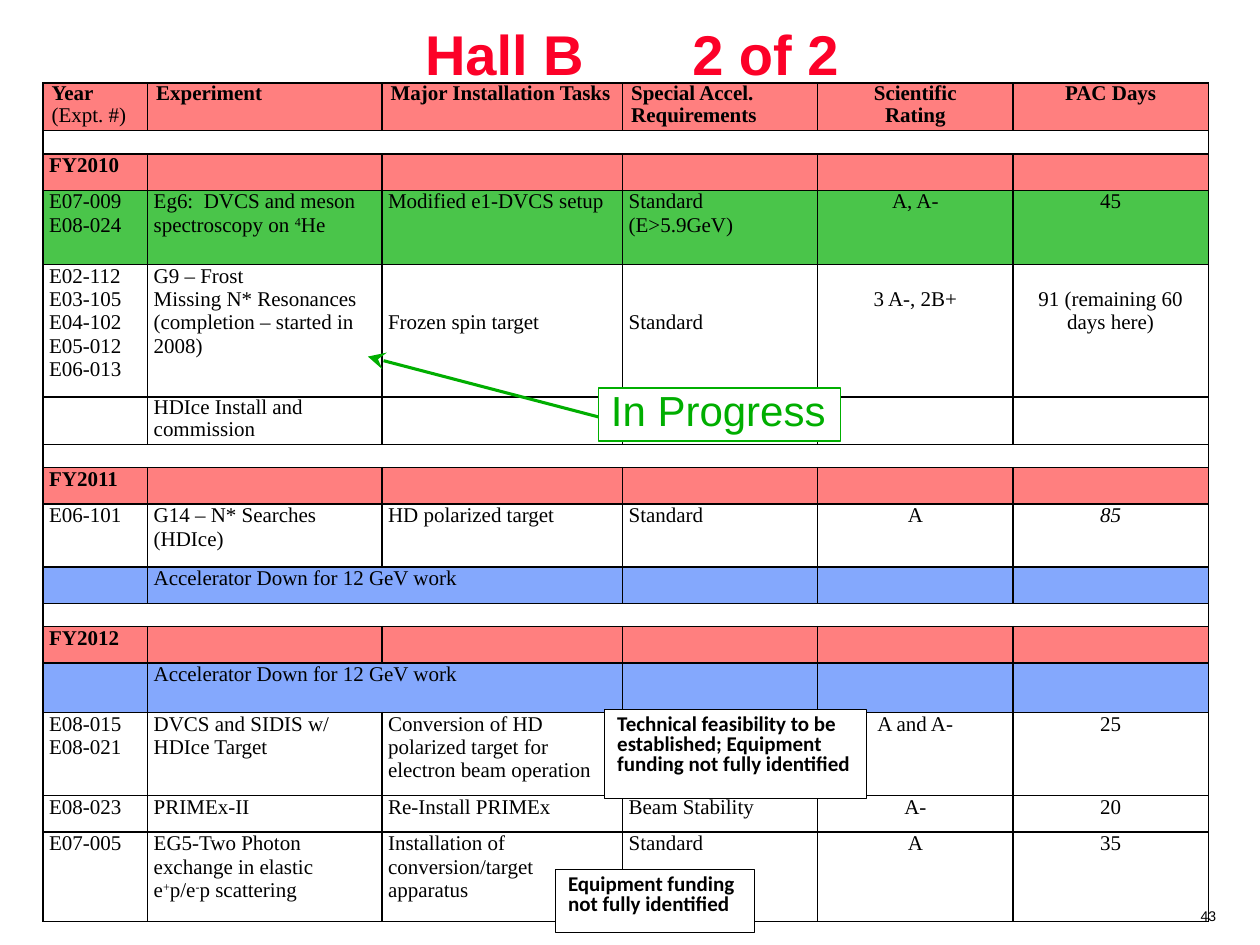
import pptx
import pptx.dml.color
import pptx.enum.shapes
import pptx.enum.text
import pptx.oxml
import pptx.oxml.ns
import pptx.util
from pptx.util import Inches

COLORS = {"black": "000000", "white": "FFFFFF", "title": "FC0128",
          "red": "FF0000", "green": "00AE00", "blue": "0B52FC"}
ALPHA = {"red": 50, "green": 71, "blue": 50}
ALIGN = pptx.enum.text.PP_ALIGN
COLUMNS = [0.83, 1.86, 1.91, 1.55, 1.55, 1.55]
LINE = 0.185  # height of one table line in inches
DOWN = "Accelerator Down for 12 GeV work"

# Each row: height, fill, cell texts; ^ encloses superscripts
ROWS = [
    (0.29, "red", ["Year\n(Expt. #)", "Experiment", "Major Installation Tasks",
                   "Special Accel. Requirements", "Scientific\nRating", "PAC Days"]),
    (0.18, None, []),
    (0.29, "red", ["FY2010"]),
    (0.59, "green", ["E07-009\nE08-024", "Eg6:  DVCS and meson spectroscopy on ^4^He",
                     "Modified e1-DVCS setup", "Standard (E>5.9GeV)", "A, A-", "45"]),
    (1.05, None, ["E02-112\nE03-105\nE04-102\nE05-012\nE06-013",
                  "G9 – Frost\nMissing N* Resonances\n(completion – started in 2008)",
                  "Frozen spin target", "Standard", "3 A-, 2B+",
                  "91 (remaining 60 days here)"]),
    (0.29, None, ["", "HDIce Install and commission"]),
    (0.17, None, []),
    (0.29, "red", ["FY2011"]),
    (0.5, None, ["E06-101", "G14 – N* Searches (HDIce)", "HD polarized target",
                 "Standard", "A", "85"]),
    (0.29, "blue", ["", DOWN]),
    (0.14, None, []),
    (0.29, "red", ["FY2012"]),
    (0.39, "blue", ["", DOWN]),
    (0.66, None, ["E08-015\nE08-021", "DVCS and SIDIS w/ HDIce Target",
                  "Conversion of HD polarized target for electron beam operation",
                  "", "A and A-", "25"]),
    (0.29, None, ["E08-023", "PRIMEx-II", "Re-Install PRIMEx", "Beam Stability",
                  "A-", "20"]),
    (0.71, None, ["E07-005", "EG5-Two Photon exchange in elastic \ne^+^p/e^-^p scattering",
                  "Installation of conversion/target apparatus ", "Standard", "A", "35"]),
]
FROST_ROW = 4
LINES_DOWN = [0, 0, 2, 2, 1, 1]  # lines by which the Frost row's texts sit lower
TIGHT_ROWS = (0, 5)  # two lines of text fill the whole row


def rgb(name):
    return pptx.dml.color.RGBColor.from_string(COLORS[name])


def style(font, name, size, color="black", bold=False):
    font.name = name
    font.size = pptx.util.Pt(size)
    font.color.rgb = rgb(color)
    font.bold = bold


def add_title(page):
    title = page.shapes.title
    title.left, title.top = Inches(0.95), Inches(0.02)
    title.width, title.height = Inches(8.13), Inches(0.81)
    title.text_frame.vertical_anchor = pptx.enum.text.MSO_ANCHOR.MIDDLE
    para = title.text_frame.paragraphs[0]
    para.alignment = ALIGN.CENTER
    for text in ("Hall B", " ", "2 of 2"):
        span = para.add_run()
        span.text = text
        style(span.font, "Arial", 32, "title", True)
    # One wide space separates the two halves
    para.runs[1].font._element.set("spc", "5300")


def set_borders(cell):
    properties = cell._tc.get_or_add_tcPr()
    for side in ("lnL", "lnR", "lnT", "lnB"):
        properties.append(pptx.oxml.parse_xml(
            f'<a:{side} {pptx.oxml.ns.nsdecls("a")} w="12700"><a:solidFill>'
            f'<a:srgbClr val="{COLORS["black"]}"/></a:solidFill></a:{side}>'))


def set_fill(cell, color):
    if color is None:
        cell.fill.background()
        return
    cell.fill.solid()
    cell.fill.fore_color.rgb = rgb(color)
    fill = cell._tc.tcPr.find(pptx.oxml.ns.qn("a:solidFill"))
    fill[0].append(pptx.oxml.parse_xml(
        f'<a:alpha {pptx.oxml.ns.nsdecls("a")} val="{ALPHA[color] * 1000}"/>'))


def write_cell(cell, text, centered, bold, size, spacing):
    cell.text_frame.text = text.replace("^", "")
    for para, line in zip(cell.text_frame.paragraphs, text.split("\n")):
        para.alignment = ALIGN.CENTER if centered else ALIGN.LEFT
        para.line_spacing = spacing
        style(para.font, "Times New Roman", size)
        if not line:
            continue
        para.clear()
        for index, part in enumerate(line.split("^")):
            span = para.add_run()
            span.text = part
            style(span.font, "Times New Roman", size, bold=bold)
            if index % 2:
                span.font._element.set("baseline", "30000")


def add_schedule(page):
    frame = page.shapes.add_table(len(ROWS), len(COLUMNS), Inches(0.34), Inches(0.66),
                                  Inches(sum(COLUMNS)), Inches(sum(row[0] for row in ROWS)))
    table = frame.table
    table.first_row = table.horz_banding = False
    for column, width in zip(table.columns, COLUMNS):
        column.width = Inches(width)
    for r, (height, color, texts) in enumerate(ROWS):
        table.rows[r].height = Inches(height)
        size = 12 if texts else 11
        spacing = 0.94 if r in TIGHT_ROWS else 1.0
        for c in range(len(COLUMNS)):
            cell = table.cell(r, c)
            cell.margin_left = cell.margin_right = Inches(0.05 if r else 0.07)
            cell.margin_bottom = 0
            cell.margin_top = Inches(LINES_DOWN[c] * LINE) if r == FROST_ROW else 0
            set_borders(cell)
            set_fill(cell, color)
            text = texts[c] if c < len(texts) else ""
            write_cell(cell, text, c > 3, color == "red", size, spacing)
        if not texts:  # separator row
            table.cell(r, 0).merge(table.cell(r, len(COLUMNS) - 1))
        elif DOWN in texts:
            table.cell(r, 1).merge(table.cell(r, 2))
    # Exceptions to the row styles
    table.cell(0, 0).text_frame.paragraphs[1].runs[0].font.bold = False
    table.cell(8, 5).text_frame.paragraphs[0].runs[0].font.italic = True


def add_callout(page, place, text, font, size, color="black", bold=False, wrap=True):
    box = page.shapes.add_shape(pptx.enum.shapes.MSO_SHAPE.RECTANGLE,
                                *[Inches(value) for value in place])
    box.shadow.inherit = False
    box.fill.solid()
    box.fill.fore_color.rgb = rgb("white")
    box.line.color.rgb = rgb(color)
    box.line.width = pptx.util.Pt(0.75)
    box.text_frame.text = text
    box.text_frame.word_wrap = wrap
    box.text_frame.vertical_anchor = pptx.enum.text.MSO_ANCHOR.TOP
    para = box.text_frame.paragraphs[0]
    para.alignment = ALIGN.LEFT
    para.line_spacing = 0.8
    para.space_before = pptx.util.Pt(size * 0.2)
    style(para.runs[0].font, font, size, color, bold)


def add_arrow(page, start, end):
    arrow = page.shapes.add_connector(pptx.enum.shapes.MSO_CONNECTOR.STRAIGHT,
                                      *[Inches(value) for value in start + end])
    arrow.line.color.rgb = rgb("green")
    arrow.line.width = pptx.util.Pt(1.75)
    namespace = pptx.oxml.ns.nsdecls("a")
    arrow.line._get_or_add_ln().append(pptx.oxml.parse_xml(
        f'<a:tailEnd {namespace} type="stealth" w="lg" len="lg"/>'))
    arrow._element.spPr.append(pptx.oxml.parse_xml(f"<a:effectLst {namespace}/>"))


def add_page_number(page):
    box = page.shapes.add_textbox(Inches(9.42), Inches(7.18), Inches(0.34), Inches(0.21))
    box.text_frame.text = "43"
    box.text_frame.word_wrap = False
    para = box.text_frame.paragraphs[0]
    para.alignment = ALIGN.CENTER
    para.line_spacing = 0.8
    para.space_before = pptx.util.Pt(1.6)
    style(para.runs[0].font, "Arial", 8)


def main():
    deck = pptx.Presentation()
    deck.slide_width, deck.slide_height = Inches(10), Inches(7.5)
    page = deck.slides.add_slide(deck.slide_layouts[5])
    add_page_number(page)
    add_title(page)
    add_schedule(page)
    # Notes over the table
    add_callout(page, (4.8, 5.63, 2.08, 0.71),
                "Technical feasibility to be established; Equipment funding not fully identified",
                "Calibri", 12, bold=True)
    add_callout(page, (4.41, 6.9, 1.58, 0.5), "Equipment funding not fully identified",
                "Calibri", 12, bold=True)
    add_arrow(page, (4.83, 3.33), (2.92, 2.83))
    add_callout(page, (4.75, 3.08, 1.92, 0.42), "In Progress", "Arial", 24, "green", wrap=False)
    deck.save("out.pptx")


if __name__ == "__main__":
    main()
